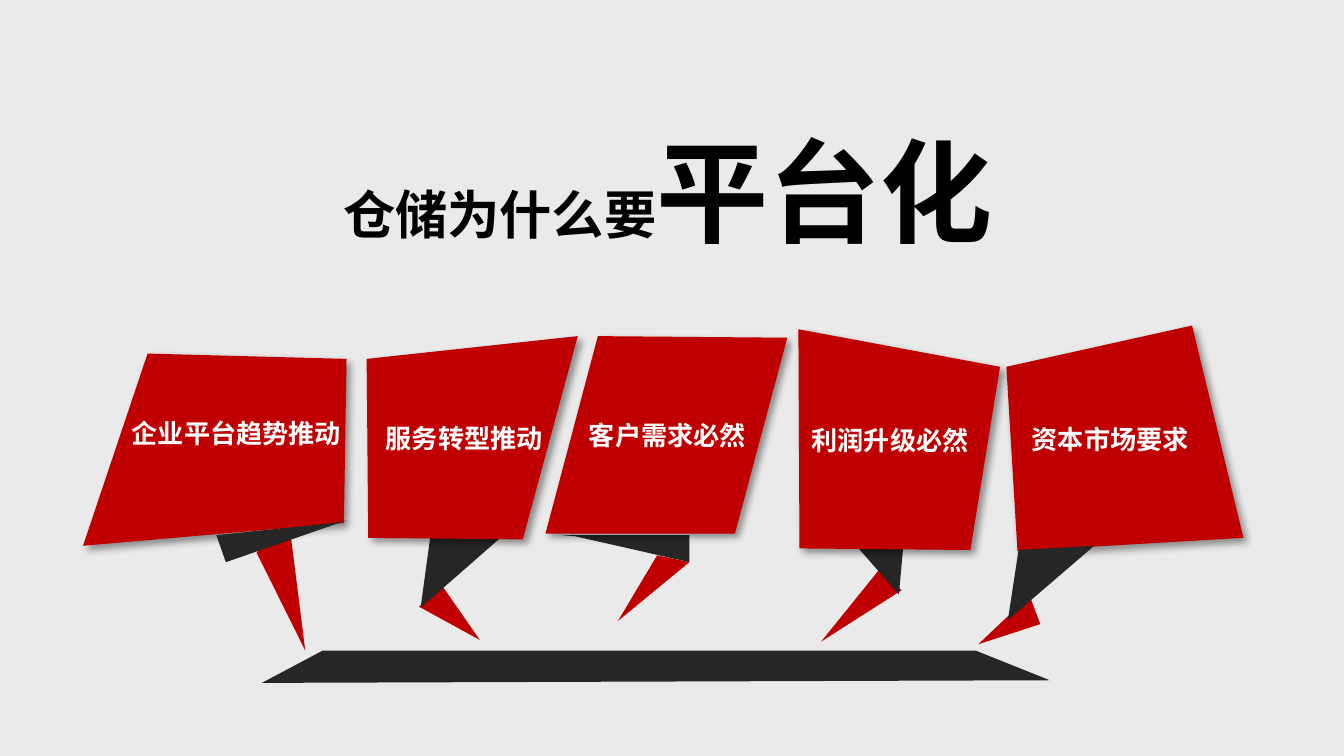
from lxml import etree
from pptx import Presentation
from pptx.dml.color import RGBColor
from pptx.enum.text import MSO_ANCHOR, PP_ALIGN
from pptx.oxml.ns import qn
from pptx.util import Cm, Pt

MID = MSO_ANCHOR.MIDDLE
LEFT = PP_ALIGN.LEFT
MIDST = PP_ALIGN.CENTER
RED = RGBColor(0xC0, 0x00, 0x00)
DARK = RGBColor(0x26, 0x26, 0x26)
GREY = RGBColor(0xEA, 0xEA, 0xEA)
WHITE = RGBColor(0xFF, 0xFF, 0xFF)
BLACK = RGBColor(0x00, 0x00, 0x00)
FACE = "Noto Sans CJK SC"

deck = Presentation()
deck.slide_width = Cm(25.4)
deck.slide_height = Cm(14.28)
slide = deck.slides.add_slide(deck.slide_layouts[6])
slide.background.fill.solid()
slide.background.fill.fore_color.rgb = GREY


def write(frame, parts, ink, align, wrap, inset=0.25):
    form = {"word_wrap": wrap, "vertical_anchor": MID, "margin_left": Cm(inset)}
    for key, val in form.items():
        setattr(frame, key, val)
    para = frame.paragraphs[0]
    para.alignment = align
    for text, size in parts:
        run = para.add_run()
        run.text = text
        for key, val in {"size": Pt(size), "bold": True, "name": FACE}.items():
            setattr(run.font, key, val)
        run.font.color.rgb = ink
        east = etree.SubElement(run._r.get_or_add_rPr(), qn("a:ea"))
        east.set("typeface", FACE)


def draw(points, fill, shade=False):
    spots = [(Cm(x), Cm(y)) for x, y in points]
    pen = slide.shapes.build_freeform(*spots[0])
    pen.add_line_segments(spots[1:], close=True)
    shape = pen.convert_to_shape()
    shape.shadow.inherit = False
    shape.fill.solid()
    shape.fill.fore_color.rgb = fill
    shape.line.fill.background()
    if shade:
        glow = etree.SubElement(
            shape._element.spPr.find(qn("a:effectLst")), qn("a:outerShdw"),
            blurRad="50800", dist="38100", dir="2700000", algn="tl", rotWithShape="0")
        tint = etree.SubElement(glow, qn("a:srgbClr"), val="000000")
        etree.SubElement(tint, qn("a:alpha"), val="40000")
    return shape


title = slide.shapes.add_textbox(Cm(1.19), Cm(2.39), Cm(22.86), Cm(2.39))
write(title.text_frame, [("仓储为什么要", 28), ("平台化", 60)], BLACK, MIDST, True)

draw([(6.1, 12.29), (18.44, 12.29), (19.84, 12.85), (4.95, 12.9)], DARK)

sides = [
    ("企业平台趋势推动", 2.24, 7.75, 4.5,
     [(2.79, 6.68), (1.57, 10.31), (6.5, 9.88), (6.55, 6.78)]),
    ("资本市场要求", 19.25, 7.87, 3.51,
     [(23.5, 10.16), (22.53, 6.15), (19.02, 6.93), (19.23, 10.41)]),
]
for text, left, top, width, points in sides:
    draw(points, RED, True)
    label = slide.shapes.add_textbox(Cm(left), Cm(top), Cm(width), Cm(0.86))
    write(label.text_frame, [(text, 14)], WHITE, LEFT, False)

legs = [
    ([(4.85, 10.44), (5.77, 12.29), (5.46, 9.83)],
     [(6.55, 9.83), (4.27, 10.62), (4.09, 10.11), (6.3, 9.88)]),
    ([(7.92, 11.46), (9.07, 12.09), (8.36, 11.07)],
     [(8.13, 10.16), (7.95, 11.48), (9.55, 10.08)]),
    ([(12.42, 10.49), (11.68, 11.73), (13.03, 10.62)],
     [(10.62, 10.11), (13.03, 10.11), (13.03, 10.62), (10.87, 10.13)]),
    ([(16.61, 10.77), (15.52, 12.12), (17.04, 11.15)],
     [(16.21, 10.34), (16.99, 11.23), (17.07, 10.34)]),
    ([(19.46, 11.25), (18.49, 12.17), (19.66, 11.79)],
     [(19.25, 10.39), (19.05, 11.71), (20.68, 10.31)]),
]
for tip, fold in legs:
    draw(tip, RED)
    draw(fold, DARK)

cards = [
    ("服务转型推动", 0.36, [(6.93, 6.78), (6.96, 10.16), (9.88, 10.19), (10.92, 6.35)]),
    ("客户需求必然", 0.82, [(11.3, 6.35), (10.31, 10.08), (13.89, 10.08), (14.88, 6.38)]),
    ("利润升级必然", 0.25, [(15.09, 6.22), (15.11, 10.36), (18.34, 10.39), (18.9, 6.93)]),
]
for text, inset, points in cards:
    card = draw(points, RED, True)
    write(card.text_frame, [(text, 14)], WHITE, LEFT, True, inset)

deck.save("out.pptx")
